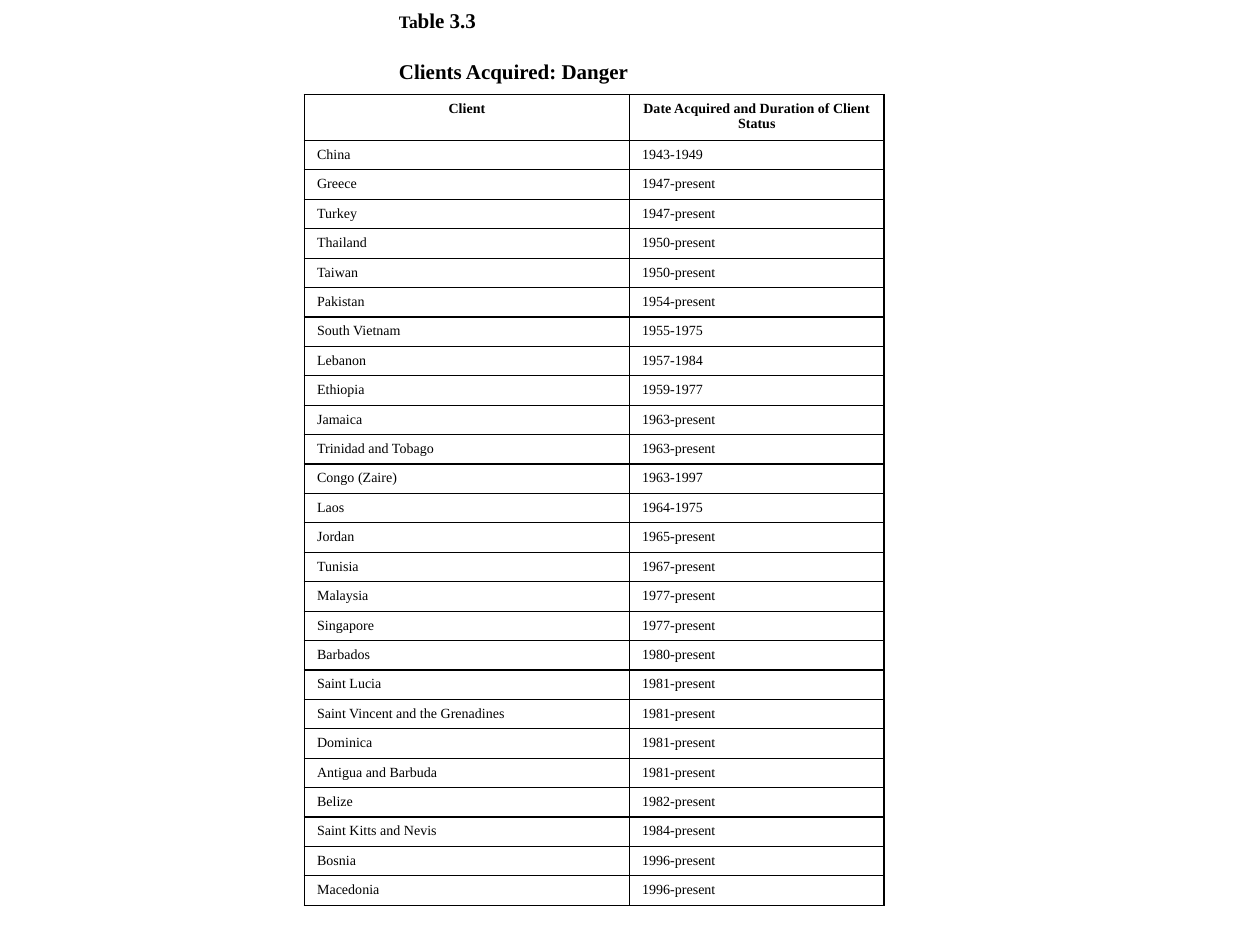
from lxml.etree import SubElement
from pptx import Presentation
from pptx.dml.color import RGBColor
from pptx.enum.text import MSO_ANCHOR as Anchor, MSO_AUTO_SIZE as AutoSize, PP_ALIGN as Align
from pptx.oxml.ns import qn
from pptx.util import Pt

BLACK = RGBColor(0, 0, 0)
FONT = "Times New Roman"

TITLE = [[("Ta", 10), ("ble 3.3", 12)], [("Clients Acquired: Danger", 12)]]
HEADER = ("Client", "Date Acquired and Duration of Client Status")
CLIENTS = [
    ("China", "1943-1949"),
    ("Greece", "1947-present"),
    ("Turkey", "1947-present"),
    ("Thailand", "1950-present"),
    ("Taiwan", "1950-present"),
    ("Pakistan", "1954-present"),
    ("South Vietnam", "1955-1975"),
    ("Lebanon", "1957-1984"),
    ("Ethiopia", "1959-1977"),
    ("Jamaica", "1963-present"),
    ("Trinidad and Tobago", "1963-present"),
    ("Congo (Zaire)", "1963-1997"),
    ("Laos", "1964-1975"),
    ("Jordan", "1965-present"),
    ("Tunisia", "1967-present"),
    ("Malaysia", "1977-present"),
    ("Singapore", "1977-present"),
    ("Barbados", "1980-present"),
    ("Saint Lucia", "1981-present"),
    ("Saint Vincent and the Grenadines", "1981-present"),
    ("Dominica", "1981-present"),
    ("Antigua and Barbuda", "1981-present"),
    ("Belize", "1982-present"),
    ("Saint Kitts and Nevis", "1984-present"),
    ("Bosnia", "1996-present"),
    ("Macedonia", "1996-present"),
]
COL_WIDTHS = (185.76, 145.44)
HEADER_HEIGHT, ROW_HEIGHT = 26.3, 16.82
OUTER, INNER = 1, 0.75


def add_text(p, text, size=8, bold=False, align=Align.LEFT):
    p.alignment = align
    r = p.add_run()
    r.text = text
    r.font.name = FONT
    r.font.size = Pt(size)
    r.font.bold = bold
    r.font.color.rgb = BLACK


def set_borders(cell, **widths):
    tc_pr = cell._tc.get_or_add_tcPr()
    for side in ("L", "R", "T", "B"):
        ln = SubElement(tc_pr, qn(f"a:ln{side}"), w=str(Pt(widths[side])))
        fill = SubElement(ln, qn("a:solidFill"))
        SubElement(fill, qn("a:srgbClr"), val=str(BLACK))


def add_title(slide):
    sp = slide.shapes.title
    sp.left, sp.top, sp.width, sp.height = Pt(228), Pt(-8.64), Pt(134), Pt(80)
    tf = sp.text_frame
    tf.auto_size = AutoSize.NONE
    tf.word_wrap = True
    tf.vertical_anchor = Anchor.TOP
    tf.margin_left = tf.margin_right = 0
    tf.margin_top, tf.margin_bottom = Pt(12.8), Pt(3)
    for i, runs in enumerate(TITLE):
        p = tf.add_paragraph() if i else tf.paragraphs[0]
        p.space_before = Pt(14.8 if i else 0)
        for text, size in runs:
            add_text(p, text, size=size, bold=True)


def add_client_table(slide):
    rows = [HEADER] + CLIENTS
    last_row, last_col = len(rows) - 1, len(HEADER) - 1
    height = HEADER_HEIGHT + ROW_HEIGHT * last_row
    table = slide.shapes.add_table(len(rows), len(HEADER), Pt(174), Pt(54),
                                   Pt(sum(COL_WIDTHS)), Pt(height)).table
    table.first_row = table.horz_banding = False
    for column, width in zip(table.columns, COL_WIDTHS):
        column.width = Pt(width)
    for i, values in enumerate(rows):
        head = i == 0
        table.rows[i].height = Pt(HEADER_HEIGHT if head else ROW_HEIGHT)
        for j, text in enumerate(values):
            cell = table.cell(i, j)
            add_text(cell.text_frame.paragraphs[0], text, bold=head,
                     align=Align.CENTER if head else Align.LEFT)
            set_borders(cell,
                        L=OUTER if head or j == 0 else INNER,
                        R=OUTER if head or j == last_col else INNER,
                        T=OUTER if i <= 1 else INNER,
                        B=OUTER if head or i == last_row else INNER)
            cell.fill.background()


def main():
    prs = Presentation()
    prs.slide_width, prs.slide_height = Pt(720), Pt(540)
    slide = prs.slides.add_slide(prs.slide_layouts[5])
    add_title(slide)
    add_client_table(slide)
    prs.save("out.pptx")


if __name__ == "__main__":
    main()
